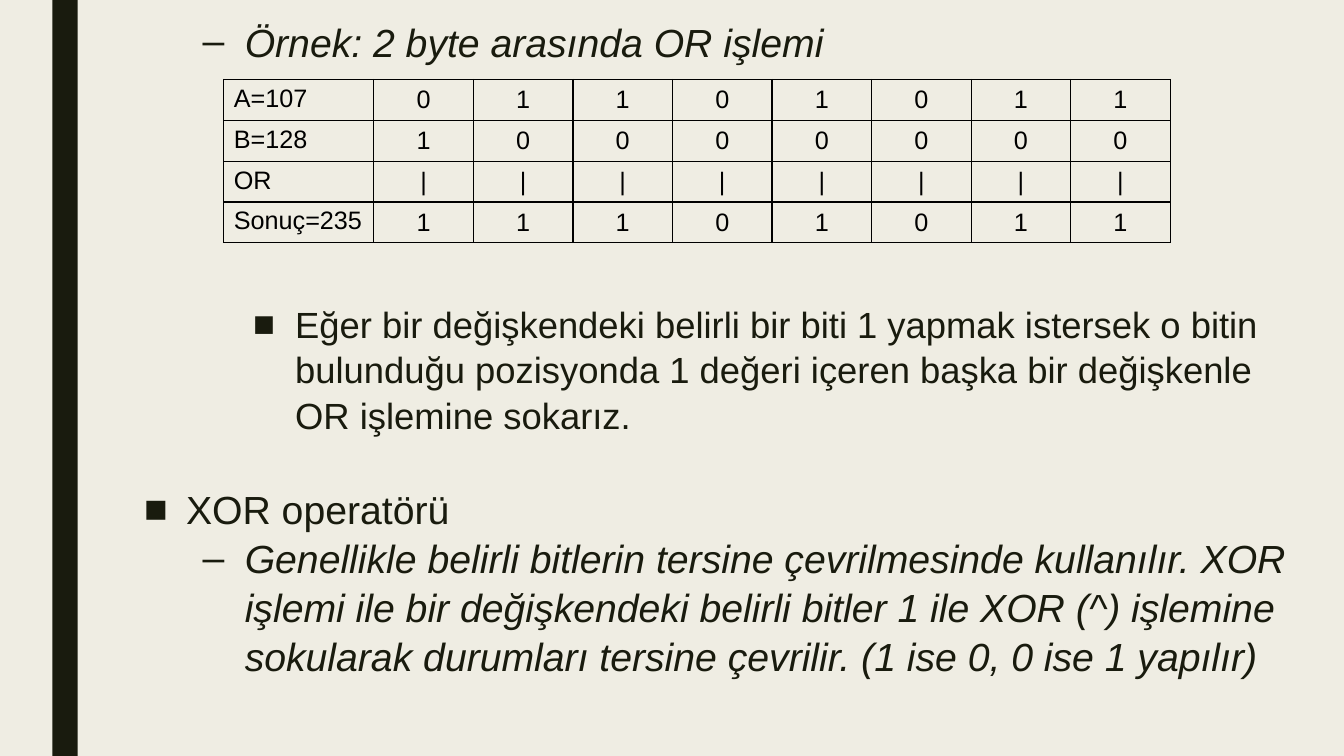
from lxml import etree
from pptx import Presentation
from pptx.dml.color import RGBColor
from pptx.enum.shapes import MSO_SHAPE
from pptx.enum.text import MSO_ANCHOR, PP_ALIGN
from pptx.oxml.ns import qn
from pptx.util import Cm, Pt

RECT = MSO_SHAPE.RECTANGLE
TOP, MIDDLE = MSO_ANCHOR.TOP, MSO_ANCHOR.MIDDLE
LEFT, CENTER = PP_ALIGN.LEFT, PP_ALIGN.CENTER

COLORS = {"paper": "EFEDE3", "ink": "191B0E", "black": "000000"}
FONT = "Arial"
HANGING = 1.06
# level: (bullet, left margin in cm, size in pt, italic)
LEVELS = {
    "topic": ("■", 1.06, 28, False),
    "point": ("–", 2.54, 28, True),
    "detail": ("■", 3.81, 26, False),
}


class SlideBuilder:
    def __init__(self, slide):
        self.s = slide

    def color(self, name):
        return RGBColor.from_string(COLORS[name])

    def background(self, color):
        fill = self.s.background.fill
        fill.solid()
        fill.fore_color.rgb = self.color(color)

    def bar(self, x, y, w, h, color):
        sp = self.s.shapes.add_shape(RECT, Cm(x), Cm(y), Cm(w), Cm(h))
        sp.shadow.inherit = False
        sp.fill.solid()
        sp.fill.fore_color.rgb = self.color(color)
        sp.line.fill.background()

    def run(self, p, text, size, color, italic=False):
        r = p.add_run()
        r.text = text
        r.font.name = FONT
        r.font.size = Pt(size)
        r.font.italic = italic
        r.font.color.rgb = self.color(color)

    def outline(self, x, y, w, h, items):
        """Each item is (level, space before in pt, text)."""
        tf = self.s.shapes.add_textbox(Cm(x), Cm(y), Cm(w), Cm(h)).text_frame
        tf.word_wrap = True
        for i, (level, before, text) in enumerate(items):
            bullet, margin, size, italic = LEVELS[level]
            p = tf.add_paragraph() if i else tf.paragraphs[0]
            p.line_spacing = 1.04
            p.space_before = Pt(before)
            pPr = p._p.get_or_add_pPr()
            pPr.set("marL", str(Cm(margin)))
            pPr.set("indent", str(-Cm(HANGING)))
            etree.SubElement(pPr, qn("a:buFont"), typeface=FONT)
            etree.SubElement(pPr, qn("a:buChar"), char=bullet)
            self.run(p, text, size, "ink", italic)

    def borders(self, cell, color, width):
        tcPr = cell._tc.get_or_add_tcPr()
        for i, side in enumerate(("a:lnL", "a:lnR", "a:lnT", "a:lnB")):
            ln = etree.Element(qn(side), w=str(Pt(width)))
            fill = etree.SubElement(ln, qn("a:solidFill"))
            etree.SubElement(fill, qn("a:srgbClr"), val=COLORS[color])
            tcPr.insert(i, ln)

    def bit_table(self, x, y, label_w, bit_w, row_h, rows):
        n_bits = len(rows[0][1])
        table = self.s.shapes.add_table(
            len(rows), n_bits + 1, Cm(x), Cm(y),
            Cm(label_w + n_bits * bit_w), Cm(row_h * len(rows))).table
        table.first_row = table.horz_banding = False
        for j, column in enumerate(table.columns):
            column.width = Cm(bit_w if j else label_w)
        for i, (label, bits) in enumerate(rows):
            table.rows[i].height = Cm(row_h)
            for j, text in enumerate([label, *bits]):
                cell = table.cell(i, j)
                cell.fill.background()
                cell.vertical_anchor = MIDDLE if j else TOP
                self.borders(cell, "black", 1)
                p = cell.text_frame.paragraphs[0]
                p.alignment = CENTER if j else LEFT
                self.run(p, text, 18, "black")


def main():
    prs = Presentation()
    prs.slide_width, prs.slide_height = Cm(33.87), Cm(19.05)
    b = SlideBuilder(prs.slides.add_slide(prs.slide_layouts[6]))

    # Background and side bar
    b.background("paper")
    b.bar(1.32, 0, 0.64, 19.05, "ink")

    # Outline, with room for the table after the first point
    b.outline(3.38, 0.28, 29.74, 18.54, [
        ("point", 0, "Örnek: 2 byte arasında OR işlemi"),
        ("detail", 168, "Eğer bir değişkendeki belirli bir biti 1 yapmak istersek "
         "o bitin bulunduğu pozisyonda 1 değeri içeren başka bir değişkenle "
         "OR işlemine sokarız."),
        ("topic", 33.5, "XOR operatörü"),
        ("point", 0, "Genellikle belirli bitlerin tersine çevrilmesinde kullanılır. "
         "XOR işlemi ile bir değişkendeki belirli bitler 1 ile XOR (^) işlemine "
         "sokularak durumları tersine çevrilir. (1 ise 0, 0 ise 1 yapılır)"),
    ])

    # Bitwise OR of two bytes
    b.bit_table(5.64, 2, 3.78, 2.51, 1.03, [
        ("A=107", "01101011"),
        ("B=128", "10000000"),
        ("OR", "|" * 8),
        ("Sonuç=235", "11101011"),
    ])

    prs.save("out.pptx")


if __name__ == "__main__":
    main()
